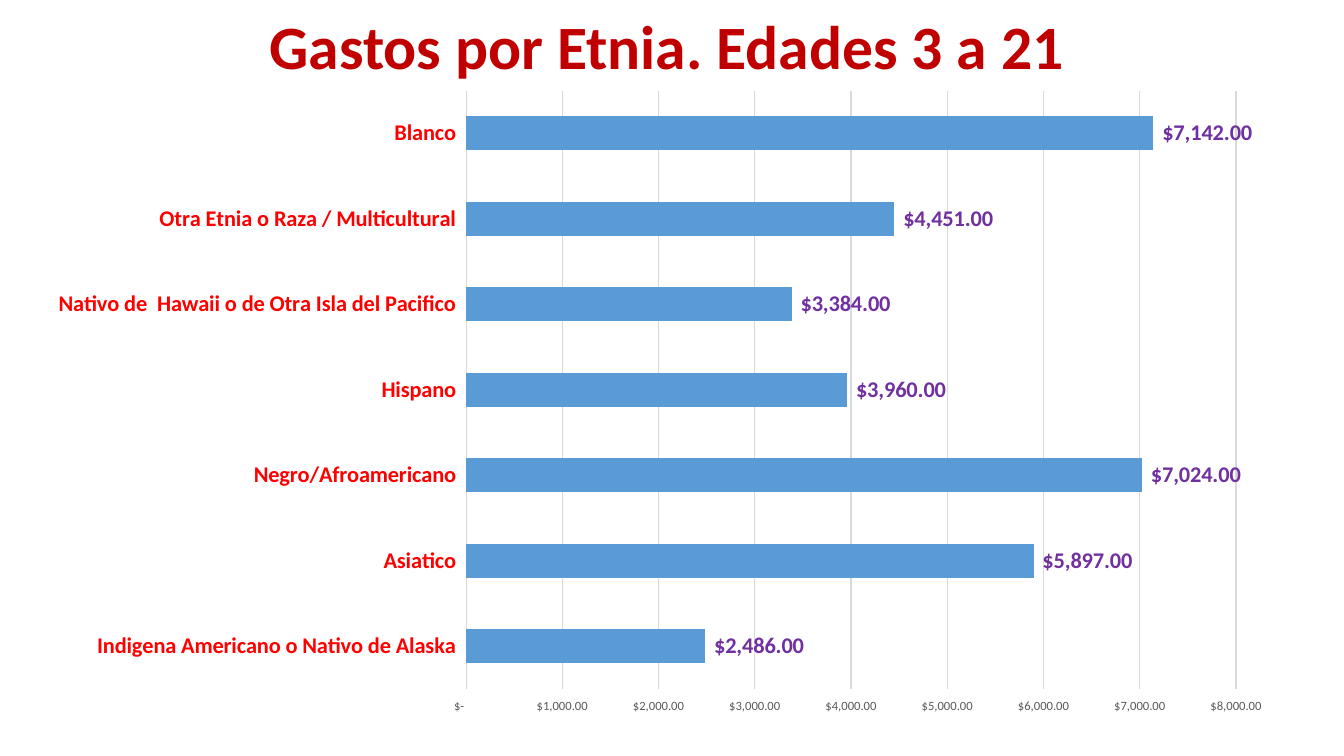
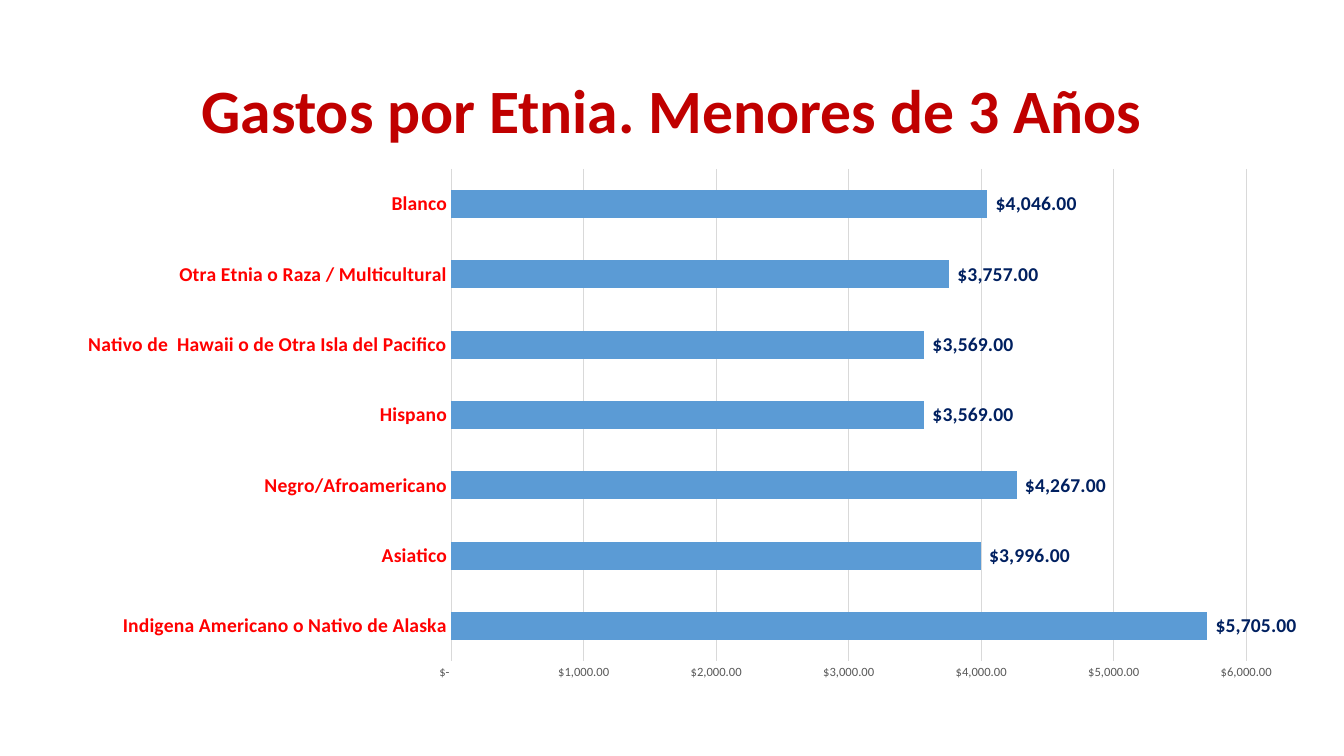
from dataclasses import dataclass
from typing import NamedTuple

from pptx import Presentation
from pptx.chart.data import CategoryChartData
from pptx.dml.color import RGBColor
from pptx.enum.chart import XL_CHART_TYPE, XL_LABEL_POSITION, XL_TICK_MARK
from pptx.enum.text import MSO_ANCHOR, PP_ALIGN
from pptx.util import Inches, Pt

SLIDE_WIDTH, SLIDE_HEIGHT = Inches(13.33), Inches(7.5)
COLUMNS, ROWS = 40, 30
DOLLARS = r'_("$"* #,##0.00_);_("$"* \(#,##0.00\);_("$"* "-"??_);_(@_)'
ETHNICITIES = (
    "Indigena Americano o Nativo de Alaska",
    "Asiatico",
    "Negro/Afroamericano",
    "Hispano",
    "Nativo de  Hawaii o de Otra Isla del Pacifico",
    "Otra Etnia o Raza / Multicultural",
    "Blanco",
)


@dataclass(frozen=True)
class Theme:
    font: str = "Calibri"
    title: str = "C00000"
    category: str = "FF0000"
    scale: str = "595959"
    grid: str = "D9D9D9"
    bar: str = "5B9BD5"
    purple: str = "7030A0"
    navy: str = "002060"
    title_size: int = 44
    scale_size: int = 9
    large_label: int = 16
    small_label: int = 14


THEME = Theme()


class Box(NamedTuple):
    """An area in grid columns and rows."""
    column: float
    row: float
    columns: float
    rows: float

    def place(self):
        column, row = SLIDE_WIDTH / COLUMNS, SLIDE_HEIGHT / ROWS
        return (int(self.column * column), int(self.row * row),
                int(self.columns * column), int(self.rows * row))


class Spending(NamedTuple):
    title: str
    title_box: Box
    chart_box: Box
    amounts: tuple
    label_size: int
    amount_color: str
    tick_mark: XL_TICK_MARK


SPENDING_SLIDES = (
    Spending("Gastos por Etnia. Edades 3 a 21",
             Box(2.61, 0, 34.5, 3.96), Box(1, 3.08, 37.38, 25.76),
             (2486, 5897, 7024, 3960, 3384, 4451, 7142),
             THEME.large_label, THEME.purple, XL_TICK_MARK.OUTSIDE),
    Spending("Gastos por Etnia. Menores de 3 Años",
             Box(2.76, 1.6, 34.5, 5.8), Box(1.89, 6.28, 36.84, 21.12),
             (5705, 3996, 4267, 3569, 3569, 3757, 4046),
             THEME.small_label, THEME.navy, XL_TICK_MARK.NONE),
)


def style_font(font, size, color, bold=False):
    font.name = THEME.font
    font.size = Pt(size)
    font.bold = bold
    font.color.rgb = RGBColor.from_string(color)


def add_title(slide, box, text):
    frame = slide.shapes.add_textbox(*box.place()).text_frame
    frame.word_wrap = True
    frame.vertical_anchor = MSO_ANCHOR.MIDDLE
    frame.text = text
    heading = frame.paragraphs[0]
    heading.alignment = PP_ALIGN.CENTER
    heading.line_spacing = 0.9
    style_font(heading.runs[0].font, THEME.title_size, THEME.title, bold=True)


def style_axis(axis, tick_mark, size, color, bold=False):
    axis.major_tick_mark = tick_mark
    axis.minor_tick_mark = XL_TICK_MARK.NONE
    axis.format.line.fill.background()
    style_font(axis.tick_labels.font, size, color, bold)


def add_spending_chart(slide, box, spending):
    spending_data = CategoryChartData(number_format=DOLLARS)
    spending_data.categories = ETHNICITIES
    spending_data.add_series("Series 1", spending.amounts)
    chart = slide.shapes.add_chart(
        XL_CHART_TYPE.BAR_CLUSTERED, *box.place(), spending_data).chart
    chart.has_title = False
    chart.has_legend = False
    chart.font.name = THEME.font

    style_axis(chart.category_axis, spending.tick_mark,
               spending.label_size, THEME.category, bold=True)
    scale = chart.value_axis
    style_axis(scale, spending.tick_mark, THEME.scale_size, THEME.scale)
    scale.minimum_scale = 0
    scale.major_unit = 1000
    scale.tick_labels.number_format = DOLLARS
    scale.tick_labels.number_format_is_linked = False
    scale.has_major_gridlines = True
    gridline = scale.major_gridlines.format.line
    gridline.width = Pt(0.75)
    gridline.color.rgb = RGBColor.from_string(THEME.grid)

    plot = chart.plots[0]
    plot.gap_width = 150
    plot.vary_by_categories = False
    bars = plot.series[0]
    bars.format.fill.solid()
    bars.format.fill.fore_color.rgb = RGBColor.from_string(THEME.bar)
    labels = bars.data_labels
    labels.show_value = True
    labels.position = XL_LABEL_POSITION.OUTSIDE_END
    labels.number_format = DOLLARS
    labels.number_format_is_linked = False
    style_font(labels.font, spending.label_size, spending.amount_color, bold=True)


def add_spending_slide(deck, spending):
    slide = deck.slides.add_slide(deck.slide_layouts[6])
    add_title(slide, spending.title_box, spending.title)
    add_spending_chart(slide, spending.chart_box, spending)


def main():
    deck = Presentation()
    deck.slide_width, deck.slide_height = SLIDE_WIDTH, SLIDE_HEIGHT
    for spending in SPENDING_SLIDES:
        add_spending_slide(deck, spending)
    deck.save("out.pptx")


if __name__ == "__main__":
    main()
